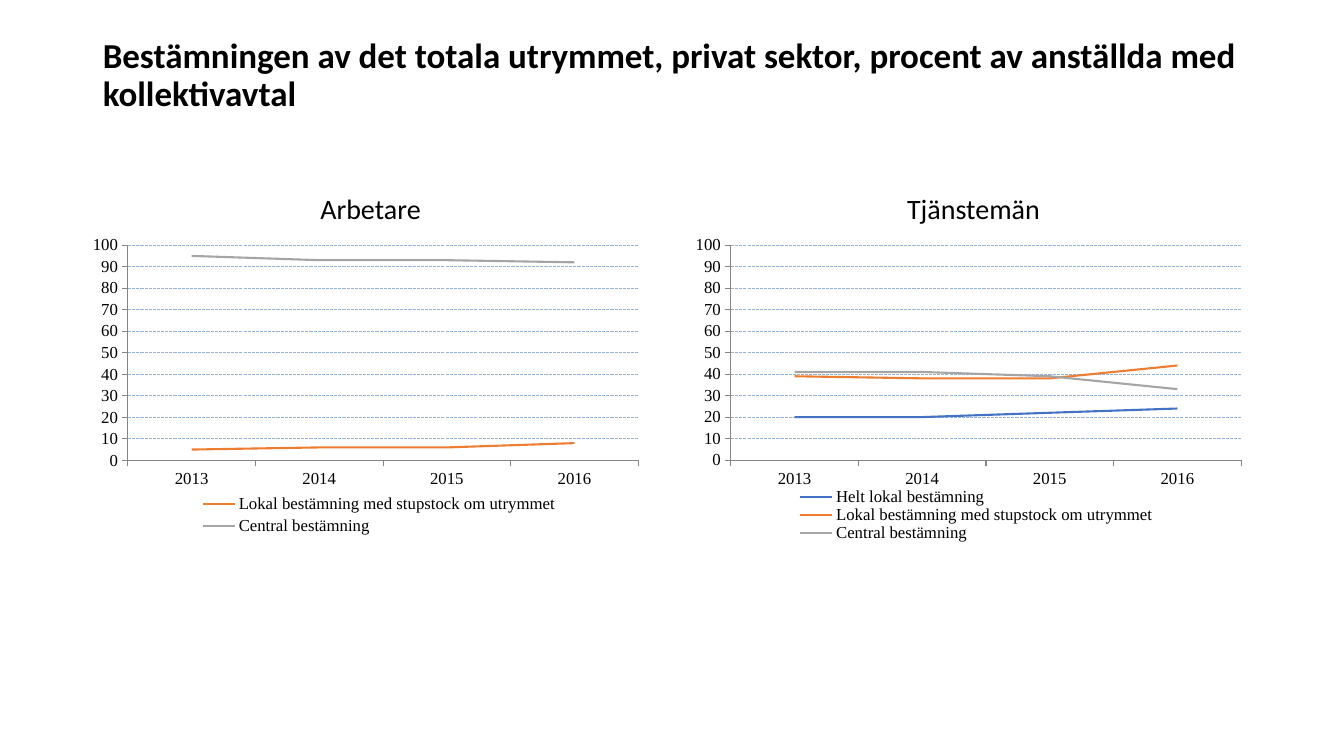
import dataclasses

import pptx
import pptx.chart.data
import pptx.dml.color
import pptx.enum.chart
import pptx.enum.dml
import pptx.enum.text
import pptx.oxml
import pptx.oxml.ns
import pptx.util

YEARS = ["2013", "2014", "2015", "2016"]
FULLY_LOCAL = "Helt lokal bestämning"
LOCAL_WITH_FALLBACK = "Lokal bestämning med stupstock om utrymmet"
CENTRAL = "Central bestämning"
PLOT_BOX = (0.062, 0.065, 0.92, 0.678)


@dataclasses.dataclass(frozen=True)
class Theme:
    text: str = "000000"
    axis: str = "868686"
    grid: str = "95B3D7"
    series: tuple = (
        (FULLY_LOCAL, "4472C4"),
        (LOCAL_WITH_FALLBACK, "ED7D31"),
        (CENTRAL, "A5A5A5"),
    )
    heading_font: str = "Calibri"
    chart_font: str = "Times New Roman"
    title_size: float = 25
    heading_size: float = 20
    chart_size: float = 12
    series_width: float = 1.5
    thin_width: float = 0.75


def rgb(colour):
    return pptx.dml.color.RGBColor.from_string(colour)


def place_in_chart(element, position, box):
    """Give a plot area or legend a fixed box, in shares of the chart."""
    for old in element.findall(pptx.oxml.ns.qn("c:layout")):
        element.remove(old)
    inner = '<c:layoutTarget val="inner"/>' if position == 0 else ""
    modes = '<c:xMode val="edge"/><c:yMode val="edge"/>'
    sizes = "".join(f'<c:{key} val="{share}"/>' for key, share in zip("xywh", box))
    layout = pptx.oxml.parse_xml(
        f'<c:layout {pptx.oxml.ns.nsdecls("c")}><c:manualLayout>'
        f"{inner}{modes}{sizes}</c:manualLayout></c:layout>"
    )
    element.insert(position, layout)


class SlideBuilder:
    """Places elements on two columns, with heights as shares of the slide."""

    MARGIN = 0.069
    COLUMN = 0.4134
    GAP = 0.0352

    def __init__(self, presentation, theme):
        self.theme = theme
        self.width = presentation.slide_width
        self.height = presentation.slide_height
        self.slide = presentation.slides.add_slide(presentation.slide_layouts[5])

    def box(self, column, top, height, span=1):
        left = self.MARGIN + column * (self.COLUMN + self.GAP)
        width = span * self.COLUMN + (span - 1) * self.GAP
        return (
            round(left * self.width),
            round(top * self.height),
            round(width * self.width),
            round(height * self.height),
        )

    def style_font(self, font, name, size, bold=False):
        font.name = name
        font.size = pptx.util.Pt(size)
        font.bold = bold
        font.color.rgb = rgb(self.theme.text)

    def style_line(self, line, colour, width):
        line.color.rgb = rgb(colour)
        line.width = pptx.util.Pt(width)

    def fill_text(self, shape, text, size, alignment, bold=False):
        frame = shape.text_frame
        frame.word_wrap = True
        frame.auto_size = pptx.enum.text.MSO_AUTO_SIZE.NONE
        frame.vertical_anchor = pptx.enum.text.MSO_ANCHOR.MIDDLE
        paragraph = frame.paragraphs[0]
        paragraph.alignment = alignment
        paragraph.line_spacing = 0.9
        paragraph.space_before = pptx.util.Pt(0)
        run = paragraph.add_run()
        run.text = text
        self.style_font(run.font, self.theme.heading_font, size, bold)

    def title(self, text, top, height):
        shape = self.slide.shapes.title
        shape.left, shape.top, shape.width, shape.height = self.box(0, top, height, span=2)
        self.fill_text(shape, text, self.theme.title_size, pptx.enum.text.PP_ALIGN.LEFT, bold=True)

    def heading(self, text, column, top, height):
        shape = self.slide.shapes.add_textbox(*self.box(column, top, height))
        self.fill_text(shape, text, self.theme.heading_size, pptx.enum.text.PP_ALIGN.CENTER)

    def line_chart(self, values, legend_box, column, top, height):
        shown = [(name, colour) for name, colour in self.theme.series if name in values]
        data = pptx.chart.data.CategoryChartData()
        data.categories = YEARS
        for name, _ in shown:
            data.add_series(name, values[name])
        chart = self.slide.shapes.add_chart(
            pptx.enum.chart.XL_CHART_TYPE.LINE, *self.box(column, top, height), data
        ).chart
        chart.has_title = False
        self.style_font(chart.font, self.theme.chart_font, self.theme.chart_size)
        plot = chart.plots[0]
        plot.vary_by_categories = False
        for series, (_, colour) in zip(plot.series, shown):
            series.smooth = False
            series.marker.style = pptx.enum.chart.XL_MARKER_STYLE.NONE
            self.style_line(series.format.line, colour, self.theme.series_width)
        self.style_axes(chart)
        chart.has_legend = True
        legend = chart.legend
        legend.position = pptx.enum.chart.XL_LEGEND_POSITION.BOTTOM
        legend.include_in_layout = False
        self.style_font(legend.font, self.theme.chart_font, self.theme.chart_size)
        place_in_chart(chart._chartSpace.chart.plotArea, 0, PLOT_BOX)
        place_in_chart(legend._element, 1, legend_box)

    def style_axes(self, chart):
        for axis in (chart.category_axis, chart.value_axis):
            axis.major_tick_mark = pptx.enum.chart.XL_TICK_MARK.OUTSIDE
            axis.minor_tick_mark = pptx.enum.chart.XL_TICK_MARK.NONE
            self.style_line(axis.format.line, self.theme.axis, self.theme.thin_width)
            self.style_font(axis.tick_labels.font, self.theme.chart_font, self.theme.chart_size)
        chart.category_axis.tick_label_position = pptx.enum.chart.XL_TICK_LABEL_POSITION.LOW
        scale = chart.value_axis
        scale.minimum_scale, scale.maximum_scale, scale.major_unit = 0, 100, 10
        scale.tick_labels.number_format = "General"
        scale.tick_labels.number_format_is_linked = False
        scale.has_major_gridlines = True
        grid_line = scale.major_gridlines.format.line
        self.style_line(grid_line, self.theme.grid, self.theme.thin_width)
        grid_line.dash_style = pptx.enum.dml.MSO_LINE.SQUARE_DOT


GROUPS = [
    (
        "Arbetare",
        {LOCAL_WITH_FALLBACK: (5, 6, 6, 8), CENTRAL: (95, 93, 93, 92)},
        (0.19, 0.84, 0.65, 0.15),
    ),
    (
        "Tjänstemän",
        {
            FULLY_LOCAL: (20, 20, 22, 24),
            LOCAL_WITH_FALLBACK: (39, 38, 38, 44),
            CENTRAL: (41, 41, 39, 33),
        },
        (0.18, 0.83, 0.65, 0.17),
    ),
]


def main():
    presentation = pptx.Presentation()
    presentation.slide_width = pptx.util.Inches(13.33)
    presentation.slide_height = pptx.util.Inches(7.5)
    builder = SlideBuilder(presentation, Theme())
    builder.title(
        "Bestämningen av det totala utrymmet, privat sektor, "
        "procent av anställda med kollektivavtal",
        top=0.053,
        height=0.096,
    )
    for column, (name, values, legend_box) in enumerate(GROUPS):
        builder.heading(name, column, top=0.243, height=0.071)
        builder.line_chart(values, legend_box, column, top=0.297, height=0.42)
    presentation.save("out.pptx")


if __name__ == "__main__":
    main()
